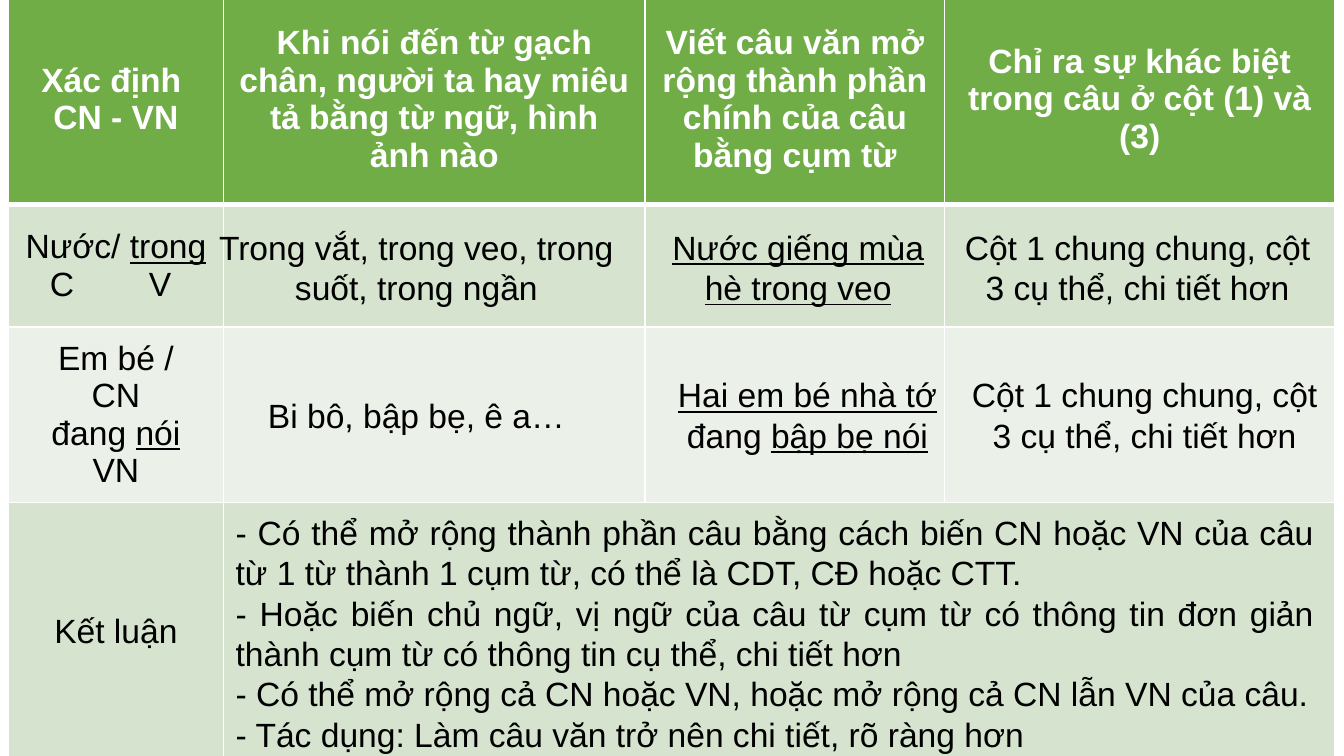
from lxml import etree
from pptx import Presentation
from pptx.dml.color import RGBColor
from pptx.enum import text
from pptx.oxml import ns
from pptx.util import Pt

WHITE = RGBColor(0xFF, 0xFF, 0xFF)
BLACK = RGBColor(0x00, 0x00, 0x00)
GREEN = RGBColor(0x70, 0xAD, 0x47)
MID_GREEN = RGBColor(0xD5, 0xE3, 0xCF)
PALE_GREEN = RGBColor(0xEB, 0xF1, 0xE9)
ROW_FILLS = [GREEN, MID_GREEN, PALE_GREEN, MID_GREEN]
LEFT, CENTER, JUSTIFY = text.PP_ALIGN.LEFT, text.PP_ALIGN.CENTER, text.PP_ALIGN.JUSTIFY


def write(frame, lines, color=BLACK, bold=False):
    """Fill a frame with (alignment, text) lines; text between bars is underlined."""
    frame.word_wrap = True
    for index, (alignment, line) in enumerate(lines):
        para = frame.paragraphs[0] if index == 0 else frame.add_paragraph()
        para.alignment = alignment
        for part, words in enumerate(line.split("|")):
            if not words:
                continue
            span = para.add_run()
            span.text = words
            span.font.name = "Arial"
            span.font.size = Pt(18)
            span.font.bold = bold
            span.font.underline = part % 2 == 1
            span.font.color.rgb = color


def add_borders(cell, bottom):
    """Draw white lines around a cell."""
    properties = cell._tc.get_or_add_tcPr()
    for side, width in (("L", 1), ("R", 1), ("T", 1), ("B", bottom)):
        line = etree.SubElement(properties, ns.qn(f"a:ln{side}"), w=str(Pt(width)))
        fill = etree.SubElement(line, ns.qn("a:solidFill"))
        etree.SubElement(fill, ns.qn("a:srgbClr"), val=str(WHITE))


deck = Presentation()
deck.slide_width, deck.slide_height = Pt(720), Pt(405)
page = deck.slides.add_slide(deck.slide_layouts[6])

# Table grid
widths = [115.2, 226, 160.4, 209]
heights = [113.3, 65.5, 94, 138.4]
table = page.shapes.add_table(
    4, 4, Pt(4.5), Pt(-3.5), Pt(sum(widths)), Pt(sum(heights))).table
for column, width in zip(table.columns, widths):
    column.width = Pt(width)
for number, (row, height, fill) in enumerate(zip(table.rows, heights, ROW_FILLS)):
    row.height = Pt(height)
    for cell in row.cells:
        add_borders(cell, bottom=3 if number == 0 else 1)
        cell.fill.solid()
        cell.fill.fore_color.rgb = fill
        cell.vertical_anchor = text.MSO_ANCHOR.MIDDLE
table.cell(3, 1).merge(table.cell(3, 3))

# Header row
headers = [
    ["Xác định ", "CN - VN"],
    ["Khi nói đến từ gạch chân, người ta hay miêu tả bằng từ ngữ, hình ảnh nào"],
    ["Viết câu văn mở rộng thành phần chính của câu bằng cụm từ"],
    ["Chỉ ra sự khác biệt trong câu ở cột (1) và (3)"],
]
for column, lines in enumerate(headers):
    write(table.cell(0, column).text_frame, [(CENTER, line) for line in lines],
          WHITE, bold=True)

# First column; C and V stand on tab stops under their words
write(table.cell(1, 0).text_frame, [(CENTER, "Nước/ |trong|"), (LEFT, "\tC\tV")])
label_para = table.cell(1, 0).text_frame.paragraphs[1]
tabs = etree.SubElement(label_para._p.get_or_add_pPr(), ns.qn("a:tabLst"))
for position in (15, 68):
    etree.SubElement(tabs, ns.qn("a:tab"), pos=str(Pt(position)), algn="l")
write(table.cell(2, 0).text_frame,
      [(CENTER, line) for line in ("Em bé /", "CN", "đang |nói|", "VN")])
write(table.cell(3, 0).text_frame, [(CENTER, "Kết luận")])

# Answers laid over the table
difference = [(CENTER, "Cột 1 chung chung, cột 3 cụ thể, chi tiết hơn")]
conclusion = [
    (JUSTIFY, "- Có thể mở rộng thành phần câu bằng cách biến CN hoặc VN của câu "
              "từ 1 từ thành 1 cụm từ, có thể là CDT, CĐ hoặc CTT."),
    (JUSTIFY, "- Hoặc biến chủ ngữ, vị ngữ của câu từ cụm từ có thông tin đơn giản "
              "thành cụm từ có thông tin cụ thể, chi tiết hơn"),
    (LEFT, "- Có thể mở rộng cả CN hoặc VN, hoặc mở rộng cả CN lẫn VN của câu."),
    (LEFT, "- Tác dụng: Làm câu văn trở nên chi tiết, rõ ràng hơn"),
]
answers = [
    (98.6, 118, 249, 51, [(CENTER, "Trong vắt, trong veo, trong suốt, trong ngần")]),
    (98.6, 208, 249, 29, [(CENTER, "Bi bô, bập bẹ, ê a…")]),
    (347.6, 118, 160, 51, [(CENTER, "|Nước giếng mùa hè trong veo|")]),
    (352.6, 197, 160, 51, [(CENTER, "|Hai em bé nhà tớ| đang |bập bẹ nói|")]),
    (507.4, 118, 204, 51, difference),
    (511.2, 197, 204, 51, difference),
    (119.2, 270.7, 592, 138, conclusion),
]
for left, top, width, height, lines in answers:
    box = page.shapes.add_textbox(Pt(left), Pt(top), Pt(width), Pt(height))
    write(box.text_frame, lines)
    box.text_frame.auto_size = text.MSO_AUTO_SIZE.SHAPE_TO_FIT_TEXT

deck.save("out.pptx")
